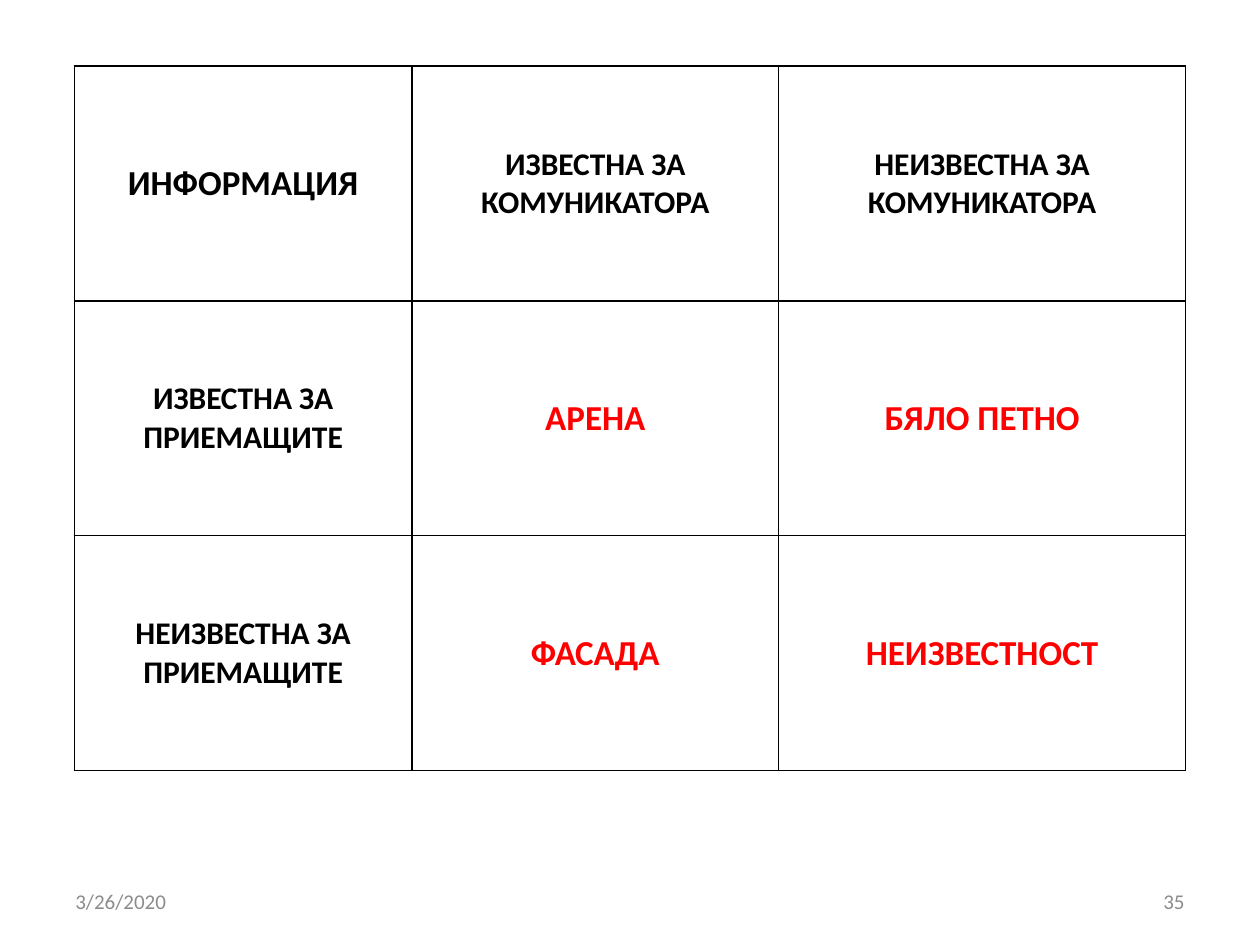
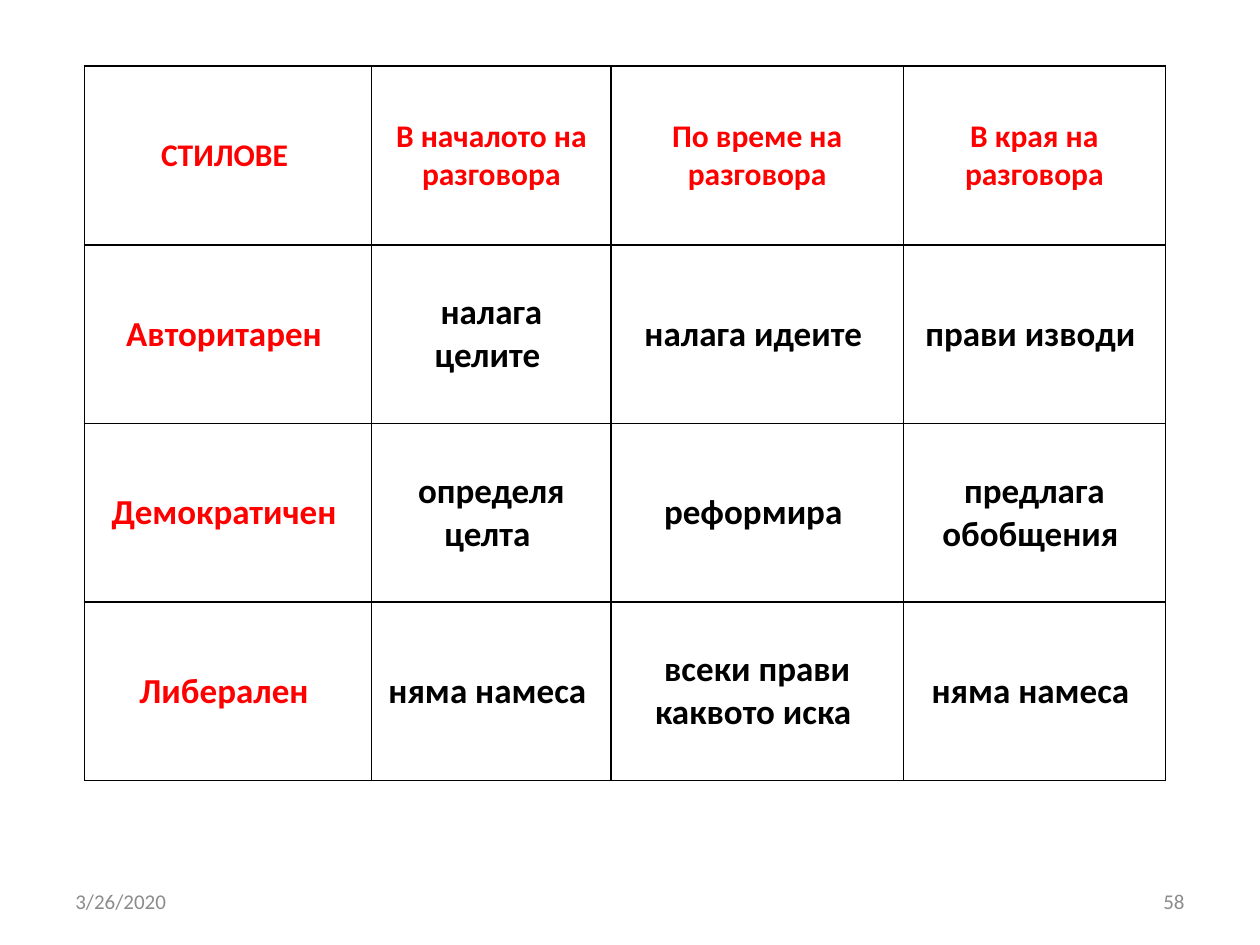
from dataclasses import dataclass

from lxml import etree
from pptx import Presentation
from pptx.dml.color import RGBColor
from pptx.enum.text import MSO_ANCHOR, PP_ALIGN
from pptx.oxml.ns import qn
from pptx.util import Inches, Pt

MIDDLE = MSO_ANCHOR.MIDDLE
LEFT, CENTER, RIGHT = PP_ALIGN.LEFT, PP_ALIGN.CENTER, PP_ALIGN.RIGHT
BLANK_LAYOUT = 6
WIDTH, HEIGHT = Inches(10), Inches(7.5)


@dataclass(frozen=True)
class Theme:
    font: str = "Calibri"
    black: str = "000000"
    red: str = "FF0000"
    grey: str = "8C8C8C"
    white: str = "FFFFFF"
    label_size: int = 18
    cell_size: int = 20
    footer_size: int = 12
    border_width: int = 1
    margin: float = 0.05
    footer_top: float = 0.927
    footer_width: float = 0.233
    footer_height: float = 0.053
    table_top: float = 0.07


THEME = Theme()
LABEL = (THEME.label_size, THEME.black)
RED_LABEL = (THEME.label_size, THEME.red)
STRONG = (THEME.cell_size, THEME.black)
RED_STRONG = (THEME.cell_size, THEME.red)

DATE = "3/26/2020"

INFORMATION = [
    ["ИНФОРМАЦИЯ", "ИЗВЕСТНА ЗА КОМУНИКАТОРА", "НЕИЗВЕСТНА ЗА КОМУНИКАТОРА"],
    ["ИЗВЕСТНА ЗА ПРИЕМАЩИТЕ", "АРЕНА", "БЯЛО ПЕТНО"],
    ["НЕИЗВЕСТНА ЗА ПРИЕМАЩИТЕ", "ФАСАДА", "НЕИЗВЕСТНОСТ"],
]

STYLES = [
    ["СТИЛОВЕ ", "В началото на разговора", "По време на разговора", "В края на разговора"],
    ["Авторитарен ", "налага целите ", "налага идеите ", "прави изводи "],
    ["Демократичен ", "определя целта ", "реформира ", "предлага обобщения "],
    ["Либерален ", "няма намеса ", "всеки прави каквото иска ", "няма намеса "],
]


def information_style(row, column):
    if row == column == 0:
        return STRONG
    return RED_STRONG if row and column else LABEL


def conversation_style(row, column):
    if row == 0:
        return RED_LABEL
    return STRONG if column else RED_STRONG


def across(share):
    return round(WIDTH * share)


def down(share):
    return round(HEIGHT * share)


def format_text(frame, text, size, color, align, bold=False):
    frame.word_wrap = True
    para = frame.paragraphs[0]
    para.text = text
    para.alignment = align
    para.font.name = THEME.font
    para.font.size = Pt(size)
    para.font.bold = bold
    para.font.color.rgb = RGBColor.from_string(color)


def add_footer_text(page, text, left, align):
    box = page.shapes.add_textbox(
        across(left), down(THEME.footer_top),
        across(THEME.footer_width), down(THEME.footer_height))
    box.text_frame.vertical_anchor = MIDDLE
    format_text(box.text_frame, text, THEME.footer_size, THEME.grey, align)


def add_borders(cell):
    properties = cell._tc.get_or_add_tcPr()
    for index, side in enumerate(("a:lnL", "a:lnR", "a:lnT", "a:lnB")):
        line = etree.Element(qn(side), w=str(Pt(THEME.border_width)))
        fill = etree.SubElement(line, qn("a:solidFill"))
        etree.SubElement(fill, qn("a:srgbClr"), val=THEME.black)
        properties.insert(index, line)


def add_grid(page, rows, left, column_shares, row_share, style):
    table = page.shapes.add_table(
        len(rows), len(column_shares), across(left), down(THEME.table_top),
        across(sum(column_shares)), down(row_share * len(rows))).table
    table.first_row = False
    table.horz_banding = False
    for column, share in zip(table.columns, column_shares):
        column.width = across(share)
    for row_index, texts in enumerate(rows):
        table.rows[row_index].height = down(row_share)
        for column_index, text in enumerate(texts):
            cell = table.cell(row_index, column_index)
            cell.vertical_anchor = MIDDLE
            cell.fill.solid()
            cell.fill.fore_color.rgb = RGBColor.from_string(THEME.white)
            size, color = style(row_index, column_index)
            format_text(cell.text_frame, text, size, color, CENTER, bold=True)
            add_borders(cell)


def add_page(deck, number):
    page = deck.slides.add_slide(deck.slide_layouts[BLANK_LAYOUT])
    add_footer_text(page, DATE, THEME.margin, LEFT)
    add_footer_text(page, number, 1 - THEME.margin - THEME.footer_width, RIGHT)
    return page


def main():
    deck = Presentation()
    deck.slide_width, deck.slide_height = WIDTH, HEIGHT
    add_grid(add_page(deck, "35"), INFORMATION, 0.059,
             (0.268, 0.291, 0.323), 0.2485, information_style)
    add_grid(add_page(deck, "58"), STYLES, 0.067,
             (0.228, 0.19, 0.232, 0.208), 0.189, conversation_style)
    deck.save("out.pptx")


if __name__ == "__main__":
    main()
